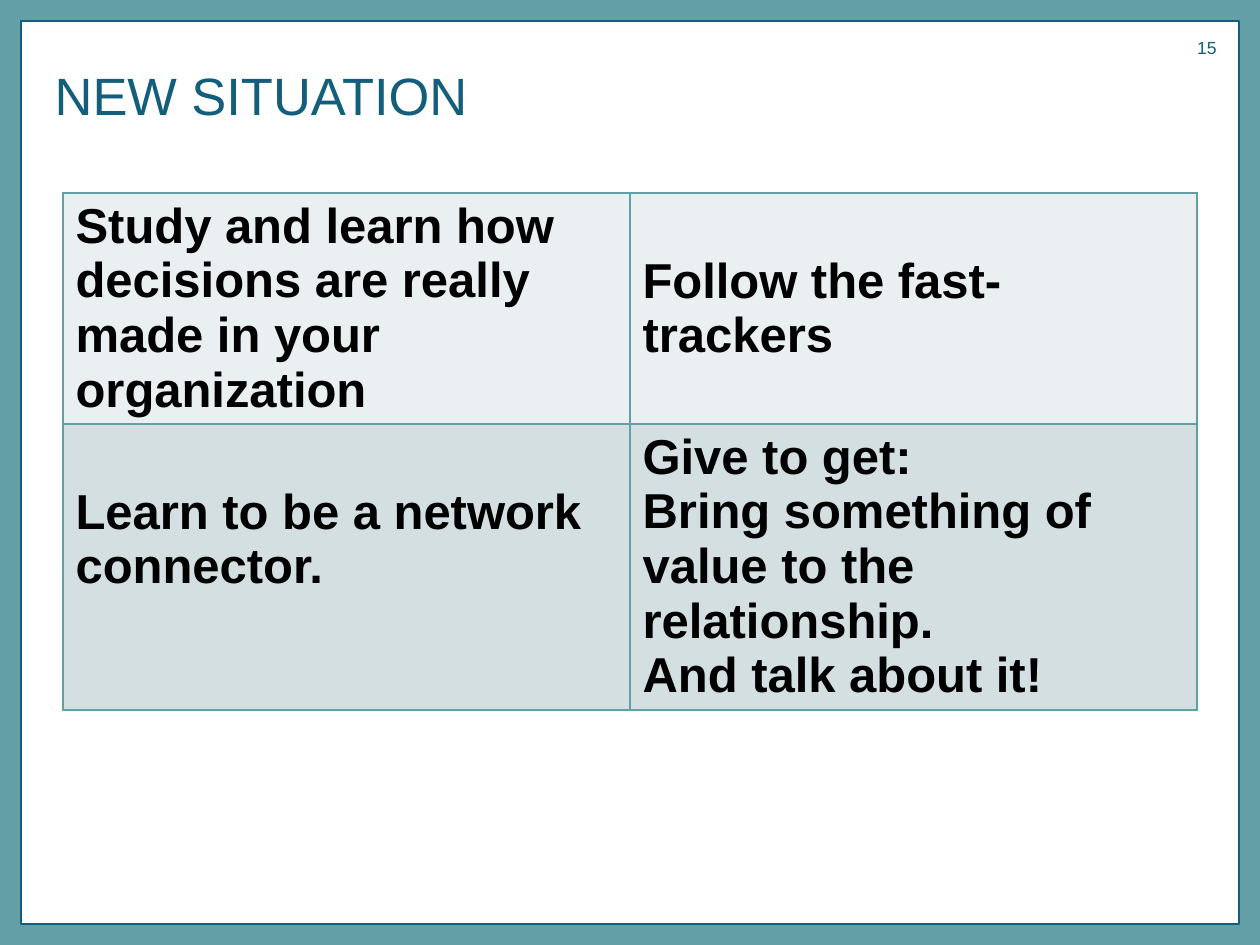
from lxml import etree
from pptx import Presentation
from pptx import util as u
from pptx.dml.color import RGBColor
from pptx.enum import shapes, text
from pptx.oxml.ns import qn

COLORS = {
    "teal": "629FA6",
    "navy": "125E7B",
    "black": "000000",
    "light": "EAF0F1",
    "shade": "D3DFE1",
}
LINE_HEIGHT = 55
CELL_MARGIN = 6
ADVICE = [
    (231, "light", [
        ["Study and learn how decisions are really made in your organization"],
        ["Follow the fast-trackers"],
    ]),
    (286, "shade", [
        ["Learn to be a network connector."],
        ["Give to get:",
         "Bring something of value to the relationship.",
         "And talk about it!"],
    ]),
]
LOWERED = ["Follow the fast-trackers", "Learn to be a network connector."]


def px(length):
    return u.Emu(round(length * 914400 / 126))


def rgb(name):
    return RGBColor.from_string(COLORS[name])


def apply(target, values):
    for name, value in values.items():
        setattr(target, name, value)


def place(shape, left, top, width, height):
    apply(shape, {"left": px(left), "top": px(top),
                  "width": px(width), "height": px(height)})


def write(frame, lines, size, color, bold=False, align=text.PP_ALIGN.LEFT):
    for index, line in enumerate(lines):
        paragraph = frame.paragraphs[0] if index == 0 else frame.add_paragraph()
        run = paragraph.add_run()
        run.text = line
        paragraph.alignment = align
        apply(run.font, {"name": "Arial", "size": u.Pt(size), "bold": bold})
        run.font.color.rgb = rgb(color)


def add_frame(slide, box, color, weight):
    frame = slide.shapes.add_shape(
        shapes.MSO_SHAPE.RECTANGLE, *[px(length) for length in box])
    frame.shadow.inherit = False
    frame.fill.background()
    frame.line.color.rgb = rgb(color)
    frame.line.width = u.Pt(weight)


def add_title(slide, wording):
    title = slide.shapes.title
    place(title, 42, -18, 1134, 150)
    apply(title.text_frame, {
        "word_wrap": True,
        "auto_size": text.MSO_AUTO_SIZE.NONE,
        "vertical_anchor": text.MSO_ANCHOR.BOTTOM,
    })
    write(title.text_frame, [wording], 30, "navy")


def add_page_number(slide, number):
    box = slide.shapes.add_textbox(px(1176), px(31), px(53), px(50))
    box.text_frame.word_wrap = True
    write(box.text_frame, [number], 10, "navy", align=text.PP_ALIGN.RIGHT)


def add_borders(cell, color, weight):
    properties = cell._tc.get_or_add_tcPr()
    for index, side in enumerate(["a:lnL", "a:lnR", "a:lnT", "a:lnB"]):
        border = etree.Element(qn(side), w=str(u.Pt(weight)))
        fill = etree.SubElement(border, qn("a:solidFill"))
        etree.SubElement(fill, qn("a:srgbClr"), val=COLORS[color])
        properties.insert(index, border)


def fill_cell(cell, lines, fill):
    lowered = lines[0] in LOWERED
    apply(cell, {
        "margin_top": px(CELL_MARGIN + LINE_HEIGHT * lowered),
        "margin_bottom": px(CELL_MARGIN),
        "vertical_anchor": text.MSO_ANCHOR.TOP,
    })
    cell.fill.solid()
    cell.fill.fore_color.rgb = rgb(fill)
    add_borders(cell, "teal", 1)
    write(cell.text_frame, lines, 28, "black", bold=True)


def add_advice(slide):
    total = sum(height for height, _, _ in ADVICE)
    advice = slide.shapes.add_table(
        len(ADVICE), 2, px(63), px(193), px(1134), px(total)).table
    apply(advice, {"first_row": False, "horz_banding": False})
    for row, (height, fill, tips) in enumerate(ADVICE):
        advice.rows[row].height = px(height)
        for column, lines in enumerate(tips):
            fill_cell(advice.cell(row, column), lines, fill)


def main():
    deck = Presentation()
    apply(deck, {"slide_width": px(1260), "slide_height": px(945)})
    slide = deck.slides.add_slide(deck.slide_layouts[5])
    add_frame(slide, (0, 0, 1260, 945), "teal", 25)
    add_frame(slide, (21, 21, 1218, 903), "navy", 0.75)
    add_title(slide, "NEW SITUATION")
    add_advice(slide)
    add_page_number(slide, "15")
    deck.save("out.pptx")


if __name__ == "__main__":
    main()
